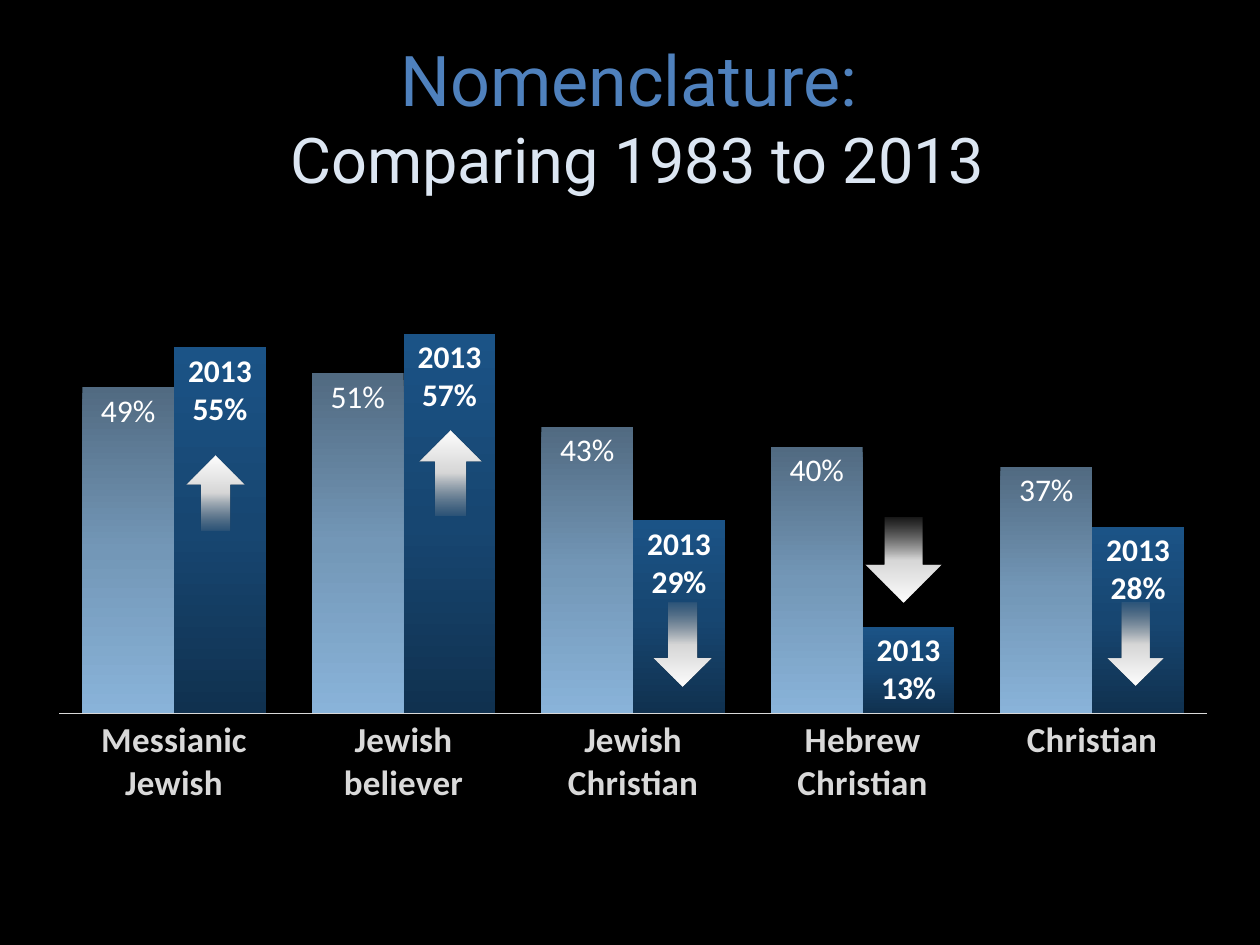
"""Build a slide comparing preferred names in 1983 and 2013 with a column chart."""
import pptx
import pptx.chart.data
import pptx.dml.color
import pptx.enum.chart
import pptx.enum.shapes
import pptx.enum.text
import pptx.oxml
import pptx.oxml.ns
import pptx.util
from lxml import etree

Inches, Pt = pptx.util.Inches, pptx.util.Pt
qn = pptx.oxml.ns.qn
COLORS = {
    "background": "000000", "heading": "4F81BD", "subheading": "DCE6F2",
    "axis": "D9D9D9", "label": "FFFFFF",
}
GRADIENTS = {
    "2013": ["10314F", "174671", "1B5386"],
    "Series 2": ["516A81", "7397B7", "89B3D9"],
    "arrow": ["979797", "D7D7D7", "FFFFFF"],
}


def rgb(name):
    return pptx.dml.color.RGBColor.from_string(COLORS[name])


def fill_gradient(fill, properties, name, angle, first_alpha=100):
    fill.gradient()
    fill.gradient_angle = angle
    stops = properties.find(qn("a:gradFill")).find(qn("a:gsLst"))
    for old_stop in list(stops):
        stops.remove(old_stop)
    for position, value in zip((0, 50, 100), GRADIENTS[name]):
        stop = etree.SubElement(stops, qn("a:gs"), pos=str(position * 1000))
        color = etree.SubElement(stop, qn("a:srgbClr"), val=value)
        if position == 0 and first_alpha < 100:
            etree.SubElement(color, qn("a:alpha"), val=str(first_alpha * 1000))


deck = pptx.Presentation()
deck.slide_width, deck.slide_height = Inches(10), Inches(7.5)
slide = deck.slides.add_slide(deck.slide_layouts[5])
slide.background.fill.solid()
slide.background.fill.fore_color.rgb = rgb("background")

title = slide.shapes.title
title.left, title.top = Inches(0.56), Inches(0.45)
title.width, title.height = Inches(9), Inches(1.16)
title.text_frame.auto_size = pptx.enum.text.MSO_AUTO_SIZE.NONE
title.text_frame.vertical_anchor = pptx.enum.text.MSO_ANCHOR.BOTTOM
heading = title.text_frame.paragraphs[0]
heading.alignment = pptx.enum.text.PP_ALIGN.CENTER
for text, size, color in (
    ("Nomenclature: ", 40, "heading"),
    ("Comparing 1983 to 2013", 36, "subheading"),
):
    if heading.runs:
        heading.add_line_break()
    run = heading.add_run()
    run.text = text
    run.font.name, run.font.size = "Roboto", Pt(size)
    run.font.color.rgb = rgb(color)

shares = pptx.chart.data.CategoryChartData(number_format="0%")
shares.categories = ["Christian", "Hebrew Christian", "Jewish Christian",
                     "Jewish believer", "Messianic Jewish"]
shares.add_series("2013", [0.28, 0.13, 0.29, 0.57, 0.55])
shares.add_series("Series 2", [0.37, 0.40, 0.43, 0.51, 0.49])
chart = slide.shapes.add_chart(
    pptx.enum.chart.XL_CHART_TYPE.COLUMN_CLUSTERED,
    Inches(0.33), Inches(2.31), Inches(9.41), Inches(4.27), shares).chart
chart.has_legend = False
chart.has_title = False
chart.font.name, chart.font.size = "Calibri", Pt(20)

names = chart.category_axis
names.reverse_order = True
names.major_tick_mark = pptx.enum.chart.XL_TICK_MARK.NONE
names.tick_labels.font.size = Pt(20)
names.tick_labels.font.bold = True
names.tick_labels.font.color.rgb = rgb("axis")
names.format.line.color.rgb = rgb("axis")
names.format.line.width = Pt(0.75)

percent = chart.value_axis
for attribute, value in {"minimum_scale": 0, "maximum_scale": 0.6,
                         "has_major_gridlines": False, "visible": False}.items():
    setattr(percent, attribute, value)

plot_area = chart._chartSpace.chart.plotArea
for old_layout in plot_area.findall(qn("c:layout")):
    plot_area.remove(old_layout)
layout = etree.Element(qn("c:layout"))
manual = etree.SubElement(layout, qn("c:manualLayout"))
for tag, value in {"layoutTarget": "inner", "xMode": "edge", "yMode": "edge",
                   "x": "0.015", "y": "0.042", "w": "0.968", "h": "0.743"}.items():
    etree.SubElement(manual, qn("c:" + tag), val=value)
plot_area.insert(0, layout)

plot = chart.plots[0]
plot.gap_width, plot.overlap, plot.vary_by_categories = 50, 0, False
for series, angle in zip(plot.series, (90, 270)):
    current = series.name == "2013"
    fill_gradient(series.format.fill, series._element.get_or_add_spPr(),
                  series.name, angle)
    labels = series.data_labels
    for attribute, value in {
        "show_value": True, "show_series_name": current,
        "number_format": "0%", "number_format_is_linked": False,
        "position": pptx.enum.chart.XL_LABEL_POSITION.INSIDE_END,
    }.items():
        setattr(labels, attribute, value)
    labels.font.size, labels.font.bold = Pt(18), current
    labels.font.color.rgb = rgb("label")
    if current:
        separator = etree.Element(qn("c:separator"))
        separator.text = "\n"
        labels._element.find(qn("c:showBubbleSize")).addnext(separator)

for left, top, width, height, rotation in (
    (3.33, 3.42, 0.49, 0.67, 0),
    (1.48, 3.62, 0.46, 0.59, 0),
    (8.79, 4.78, 0.44, 0.66, 180),
    (5.19, 4.78, 0.46, 0.67, 180),
    (6.87, 4.11, 0.60, 0.67, 180),
):
    trend = slide.shapes.add_shape(
        pptx.enum.shapes.MSO_SHAPE.UP_ARROW,
        Inches(left), Inches(top), Inches(width), Inches(height))
    trend.rotation = rotation
    trend.shadow.inherit = False
    trend.line.fill.background()
    fill_gradient(trend.fill, trend._element.spPr, "arrow", 90, first_alpha=16)

deck.save("out.pptx")
